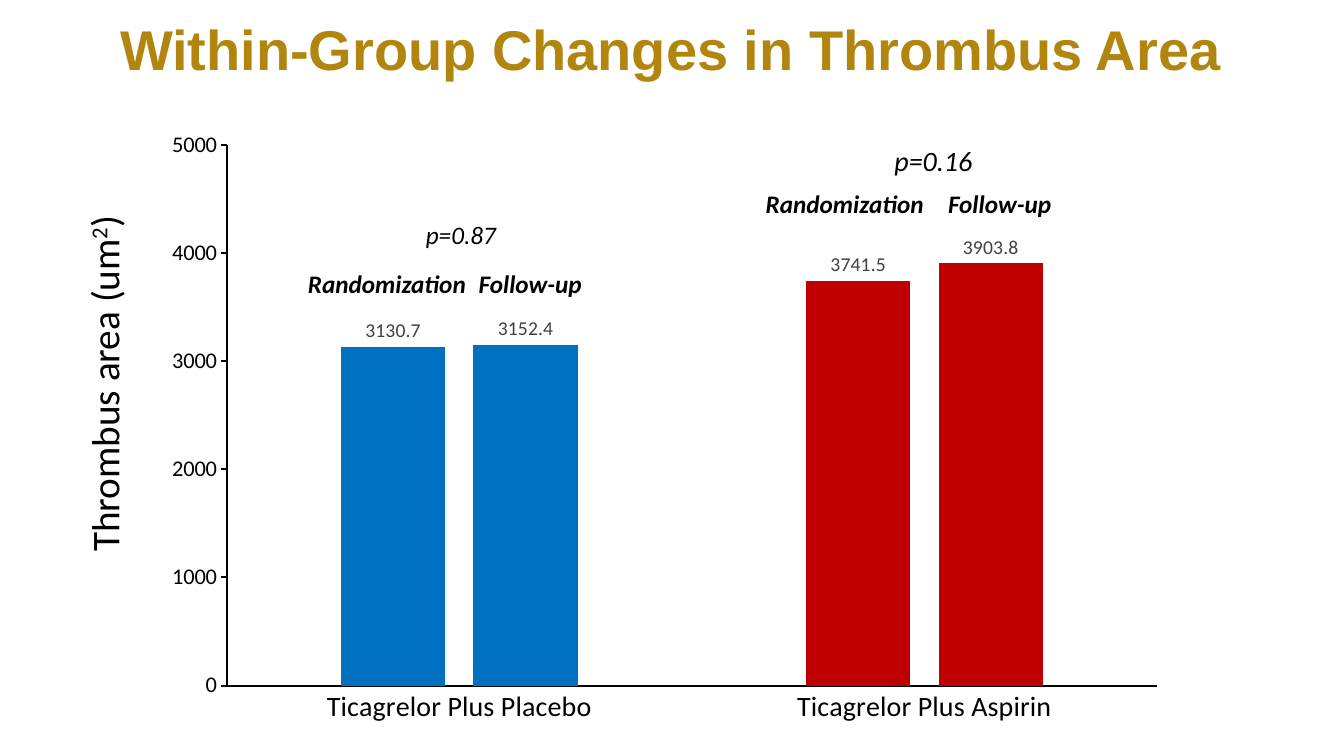
import pptx
import pptx.util
import pptx.chart.data
import pptx.dml.color
import pptx.enum.chart
import pptx.enum.text
import pptx.oxml
import pptx.oxml.ns

PX = 9525
INK = {"gold": "B2860E", "black": "000000", "grey": "404040",
       "blue": "0070C0", "red": "C00000"}
CATS = ["Ticagrelor Plus Placebo", "Ticagrelor Plus Aspirin"]
DATA = {"Series 1": [3130.7, 3741.5], "Series 2": [3152.4, 3903.8]}
BARS = ["blue", "red"]
PLOT = (72, 25, 886, 515)


def tint(name):
    return pptx.dml.color.RGBColor.from_string(INK[name])


def style(font, size, ink="black", face="Calibri", bold=False, slant=False):
    font.size = pptx.util.Pt(size)
    font.name = face
    font.bold = bold
    font.italic = slant
    font.color.rgb = tint(ink)


def write(slide, box, text, turn=0, lift="", tail="", **form):
    area = slide.shapes.add_textbox(*[n * PX for n in box])
    area.rotation = turn
    frame = area.text_frame
    frame.word_wrap = True
    line = frame.paragraphs[0]
    line.alignment = pptx.enum.text.PP_ALIGN.CENTER
    for part, base in ((text, 0), (lift, 30000), (tail, 0)):
        if part:
            run = line.add_run()
            run.text = part
            style(run.font, **form)
            if base:
                run._r.get_or_add_rPr().set("baseline", str(base))


def place(chart, box):
    wide, high = box[2:]
    area = chart._chartSpace.chart.plotArea
    for old in area.findall(pptx.oxml.ns.qn("c:layout")):
        area.remove(old)
    rows = ['<c:layoutTarget val="inner"/>', '<c:xMode val="edge"/>',
            '<c:yMode val="edge"/>']
    for key, size, full in zip("xywh", PLOT, (wide, high, wide, high)):
        rows.append(f'<c:{key} val="{size / full:.4f}"/>')
    area.insert(0, pptx.oxml.parse_xml(
        f'<c:layout {pptx.oxml.ns.nsdecls("c")}><c:manualLayout>'
        + "".join(rows) + "</c:manualLayout></c:layout>"))


def rule(axis, size, tick):
    axis.has_major_gridlines = False
    axis.major_tick_mark = tick
    axis.minor_tick_mark = pptx.enum.chart.XL_TICK_MARK.NONE
    axis.format.line.color.rgb = tint("black")
    axis.format.line.width = pptx.util.Pt(1.5)
    style(axis.tick_labels.font, size)


def graph(slide, box):
    data = pptx.chart.data.CategoryChartData(number_format="General")
    data.categories = CATS
    for name, vals in DATA.items():
        data.add_series(name, vals)
    chart = slide.shapes.add_chart(
        pptx.enum.chart.XL_CHART_TYPE.COLUMN_CLUSTERED,
        *[n * PX for n in box], data).chart
    chart.has_title = False
    chart.has_legend = False
    style(chart.font, 10)
    mark = pptx.enum.chart.XL_TICK_MARK
    rule(chart.category_axis, 20, mark.NONE)
    rule(chart.value_axis, 16, mark.OUTSIDE)
    chart.value_axis.minimum_scale = 0
    chart.value_axis.maximum_scale = 5000
    chart.value_axis.major_unit = 1000
    plot = chart.plots[0]
    plot.vary_by_categories = False
    plot.gap_width = 219
    plot.overlap = -27
    for series in plot.series:
        series.format.fill.solid()
        series.format.fill.fore_color.rgb = tint("red")
        for spot, ink in enumerate(BARS):
            fill = series.points[spot].format.fill
            fill.solid()
            fill.fore_color.rgb = tint(ink)
        tags = series.data_labels
        tags.show_value = True
        tags.position = pptx.enum.chart.XL_LABEL_POSITION.OUTSIDE_END
        style(tags.font, 14, "grey")
    place(chart, box)


def title(slide, box):
    write(slide, box, "Within-Group Changes in Thrombus Area",
          size=40, ink="gold", face="Arial", bold=True)


def scale(slide, box):
    left, top, wide, high = box
    mid = left + wide // 2
    long = high
    write(slide, (mid - long // 2, top + (high - wide) // 2, long, wide),
          "Thrombus area (um", turn=270, lift="2", tail=")", size=28)


def pair(slide, box, odds, span, mid, first, size):
    left, top, wide, high = box
    last = 132
    low = top + high - 38
    write(slide, (left + mid - span // 2, top, span, 38), odds,
          size=size, slant=True)
    for text, start, room in (("Randomization", left, first),
                              ("Follow-up", left + wide - last, last)):
        write(slide, (start, low, room, 38), text,
              size=18, bold=True, slant=True)


def main():
    deck = pptx.Presentation()
    deck.slide_width = 1280 * PX
    deck.slide_height = 720 * PX
    slide = deck.slides.add_slide(deck.slide_layouts[6])
    graph(slide, (144, 113, 976, 588))
    scale(slide, (72, 67, 55, 598))
    pair(slide, (249, 204, 322, 85), "p=0.87", 92, 190, 239, 18)
    pair(slide, (688, 132, 330, 81), "p=0.16", 132, 201, 233, 20)
    title(slide, (11, 9, 1255, 74))
    deck.save("out.pptx")


if __name__ == "__main__":
    main()
